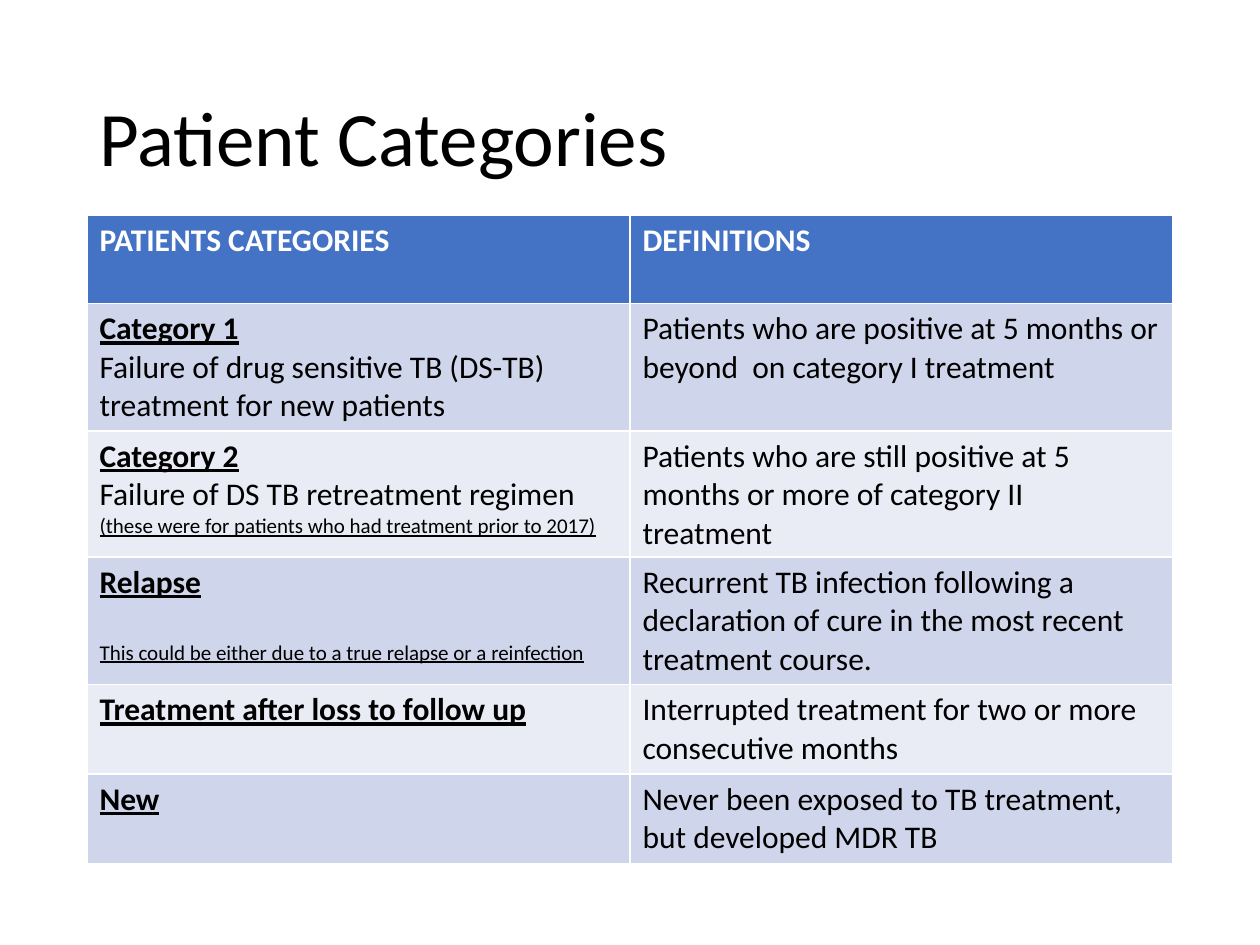
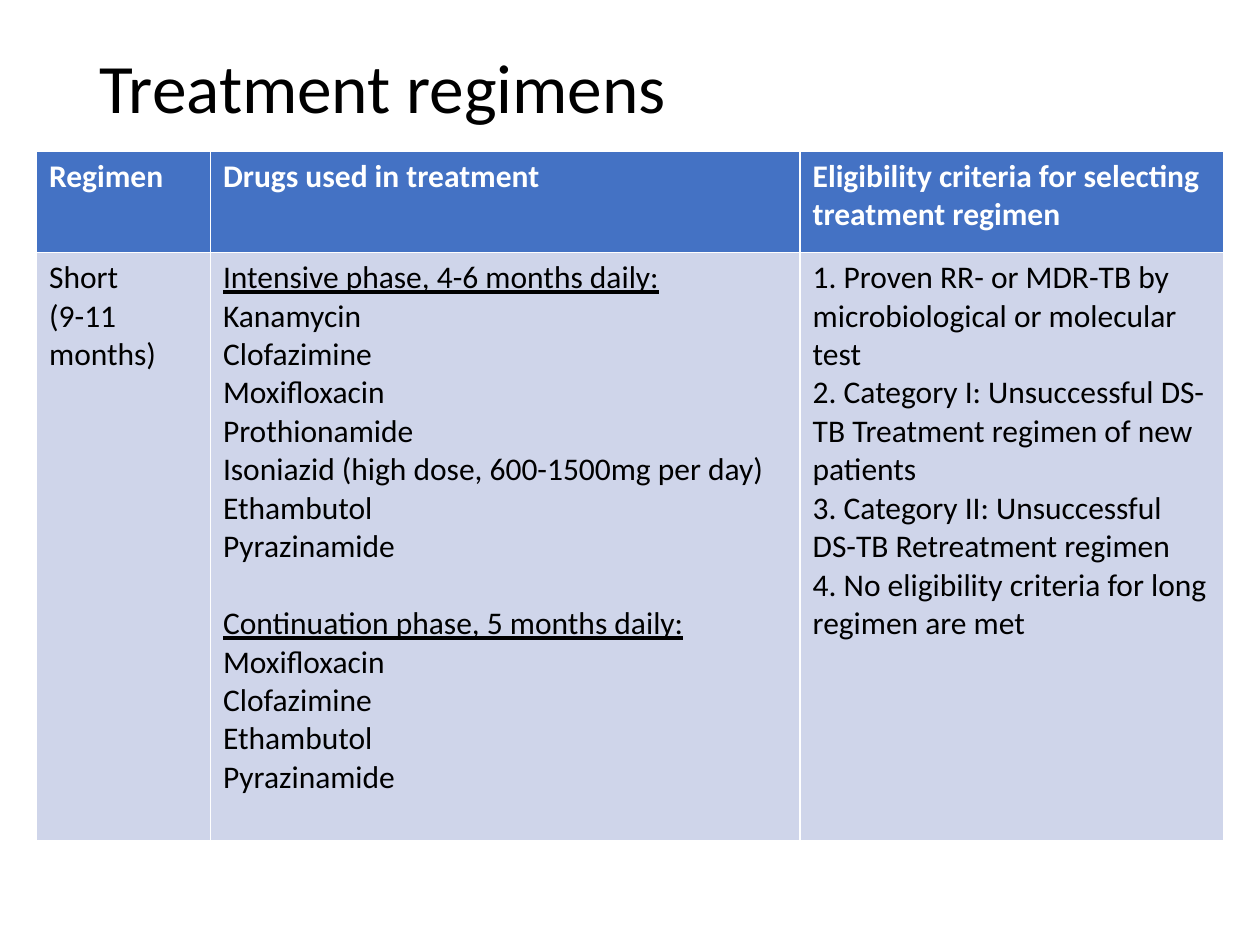
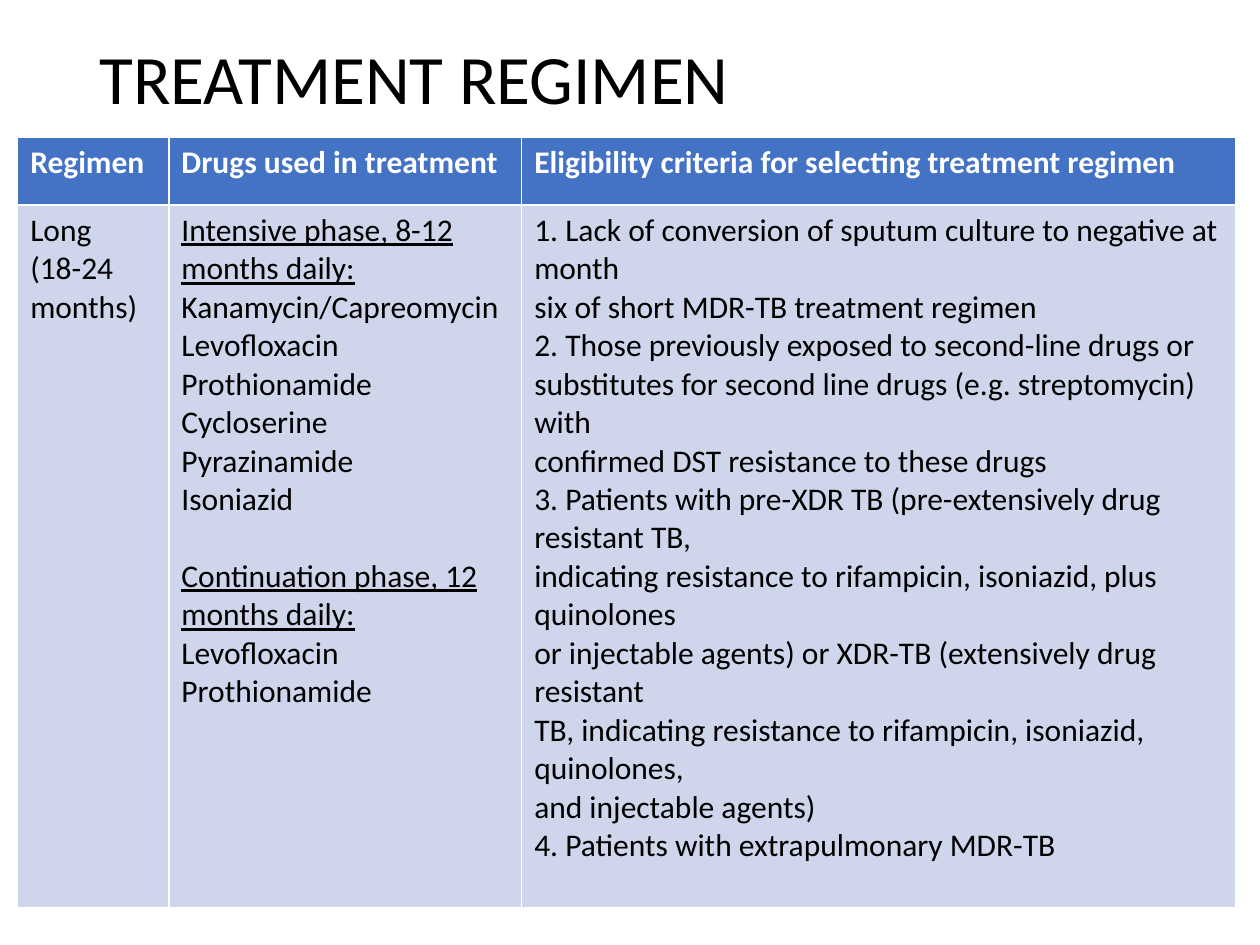
from pptx import Presentation
from pptx.dml.color import RGBColor as RGB
from pptx.enum.text import MSO_ANCHOR as Anchor
from pptx.util import Inches, Pt

BLUE = RGB(0x44, 0x72, 0xC4)
DARK = RGB(0xCF, 0xD5, 0xEA)
LIGHT = RGB(0xE9, 0xEB, 0xF5)
WHITE = RGB(0xFF, 0xFF, 0xFF)
BLACK = RGB(0x00, 0x00, 0x00)
FONT = "Calibri"

deck = Presentation()
deck.slide_width, deck.slide_height = Inches(10), Inches(7.5)
COL, ROW = deck.slide_width / 100, deck.slide_height / 100


def span(count, unit):
    return round(count * unit)


def style(part, size, tone, bold=False, under=False):
    for run in part.runs:
        font = run.font
        font.name, font.size, font.bold, font.underline = FONT, Pt(size), bold, under
        font.color.rgb = tone


# Marks before "|": b bold, u underlined, s small, g gap above
HEAD = ["Regimen", "Drugs used in treatment",
        "Eligibility criteria for selecting treatment regimen"]

groups = [
    ["PATIENTS CATEGORIES", "DEFINITIONS"],
    ["bu|Category 1\nFailure of drug sensitive TB (DS-TB) treatment for new patients",
     "Patients who are positive at 5 months or beyond  on category I treatment"],
    ["bu|Category 2\nFailure of DS TB retreatment regimen\n"
     "us|(these were for patients who had treatment prior to 2017)",
     "Patients who are still positive at 5 months or more of category II treatment"],
    ["bu|Relapse\nusg|This could be either due to a true relapse or a reinfection",
     "Recurrent TB infection following a declaration of cure "
     "in the most recent treatment course."],
    ["bu|Treatment after loss to follow up",
     "Interrupted treatment for two or more consecutive months"],
    ["bu|New", "Never been exposed to TB treatment, but developed MDR TB"],
]

short = [HEAD, [
    "Short\n(9-11\nmonths)",
    """u|Intensive phase, 4-6 months daily:
Kanamycin
Clofazimine
Moxifloxacin
Prothionamide
Isoniazid (high dose, 600-1500mg per day)
Ethambutol
Pyrazinamide
ug|Continuation phase, 5 months daily:
Moxifloxacin
Clofazimine
Ethambutol
Pyrazinamide""",
    """1. Proven RR- or MDR-TB by microbiological or molecular test
2. Category I: Unsuccessful DS-TB Treatment regimen of new patients
3. Category II: Unsuccessful DS-TB Retreatment regimen
4. No eligibility criteria for long regimen are met""",
]]

long = [HEAD, [
    "Long\n(18-24\nmonths)",
    """u|Intensive phase, 8-12 months daily:
Kanamycin/Capreomycin
Levofloxacin
Prothionamide
Cycloserine
Pyrazinamide
Isoniazid
ug|Continuation phase, 12 months daily:
Levofloxacin
Prothionamide""",
    """1. Lack of conversion of sputum culture to negative at month
six of short MDR-TB treatment regimen
2. Those previously exposed to second-line drugs or
substitutes for second line drugs (e.g. streptomycin) with
confirmed DST resistance to these drugs
3. Patients with pre-XDR TB (pre-extensively drug resistant TB,
indicating resistance to rifampicin, isoniazid, plus quinolones
or injectable agents) or XDR-TB (extensively drug resistant
TB, indicating resistance to rifampicin, isoniazid, quinolones,
and injectable agents)
4. Patients with extrapulmonary MDR-TB""",
]]

pages = [
    ("Patient Categories", 44, 19.33, 6.9, 22.8,
     [43.1, 43.1], [9.3, 13.5, 12.1, 13.5, 9.5, 9.5], groups),
    ("Treatment regimens", 39.6, 8.67, 2.9, 16, [13.8, 46.8, 33.6], [10.7, 62.3], short),
    ("TREATMENT REGIMEN", 39.6, 6.8, 1.4, 14.5, [12, 28, 56.7], [7.2, 74.4], long),
]

for title, size, tall, left, top, wides, highs, data in pages:
    slide = deck.slides.add_slide(deck.slide_layouts[6])
    box = slide.shapes.add_textbox(span(6.9, COL), span(5.33, ROW),
                                   span(86.2, COL), span(tall, ROW))
    frame = box.text_frame
    frame.word_wrap = True
    frame.vertical_anchor = Anchor.MIDDLE
    frame.text = title
    frame.paragraphs[0].line_spacing = 0.9
    style(frame.paragraphs[0], size, BLACK)

    grid = slide.shapes.add_table(len(highs), len(wides), span(left, COL), span(top, ROW),
                                  span(sum(wides), COL), span(sum(highs), ROW)).table
    for col, wide in zip(grid.columns, wides):
        col.width = span(wide, COL)
    for row, high in zip(grid.rows, highs):
        row.height = span(high, ROW)

    for r, line in enumerate(data):
        for c, text in enumerate(line):
            cell = grid.cell(r, c)
            cell.fill.solid()
            cell.fill.fore_color.rgb = BLUE if r == 0 else DARK if r % 2 else LIGHT
            cell.text_frame.text = text
            for part in cell.text_frame.paragraphs:
                marks, _, words = part.text.rpartition("|")
                part.text = words
                if "g" in marks:
                    part.space_before = Pt(22)
                style(part, 12 if "s" in marks else 18, BLACK if r else WHITE,
                      r == 0 or "b" in marks, "u" in marks)

deck.save("out.pptx")
